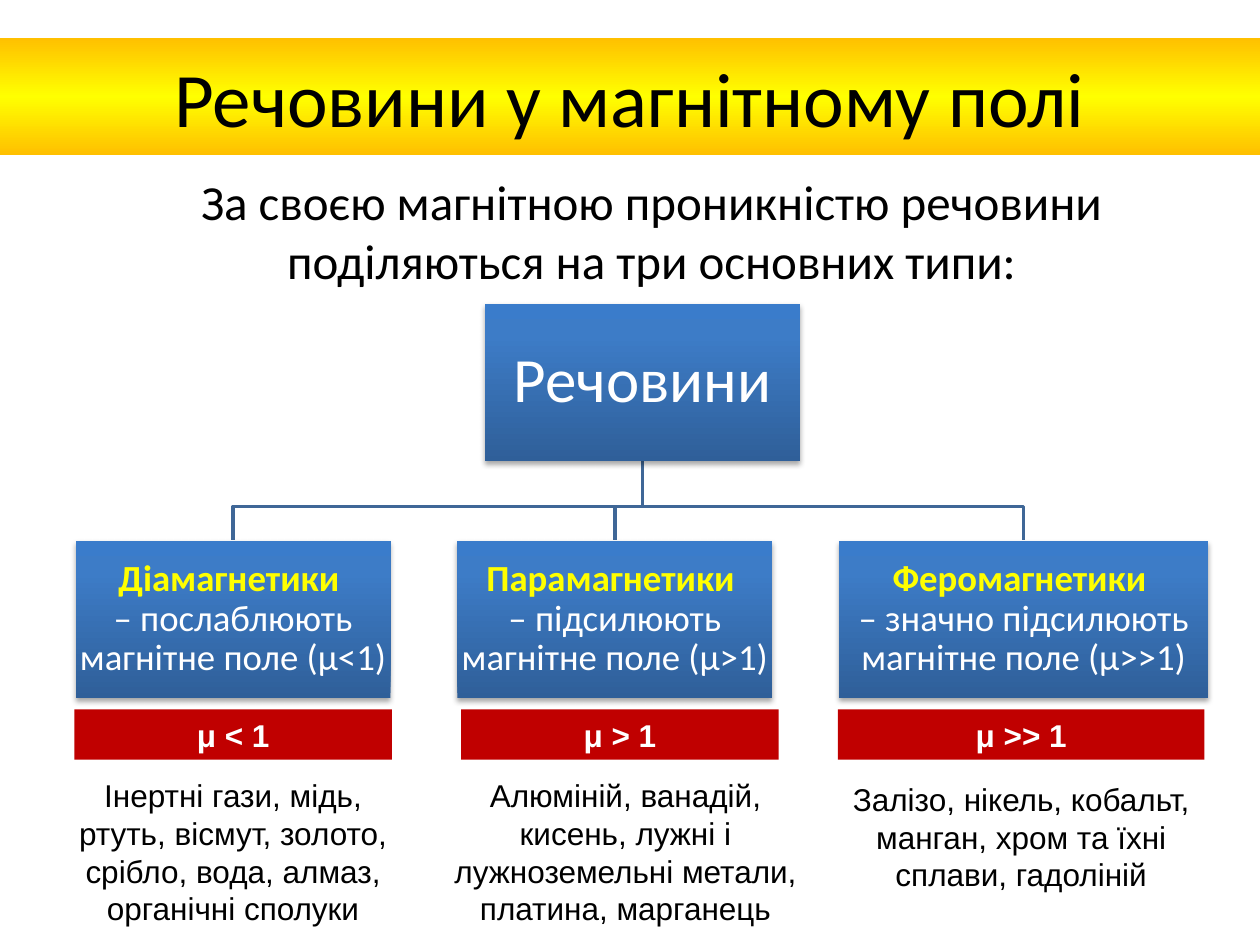
from dataclasses import dataclass

from lxml.etree import SubElement
from pptx import Presentation
from pptx.dml.color import RGBColor
from pptx.enum.shapes import MSO_SHAPE
from pptx.enum.text import MSO_ANCHOR, PP_ALIGN
from pptx.oxml.ns import qn
from pptx.util import Inches, Pt


@dataclass(frozen=True)
class Theme:
    """Colours, fonts and type sizes of the slide."""
    heading_font: str = "Calibri"
    note_font: str = "Arial"
    title_size: int = 44
    root_size: int = 36
    lead_size: int = 28
    type_size: int = 21
    note_size: int = 18
    dark: str = "000000"
    light: str = "FFFFFF"
    accent: str = "FFFF00"
    tag: str = "C00000"
    branch: str = "3F6797"
    banner: tuple = ((0, "FFC000"), (50, "FFFF00"), (100, "FFC000"))
    box: tuple = ((0, "2F5F99"), (80, "3D7CC7"), (100, "3A7CCB"))


@dataclass(frozen=True)
class Substance:
    """One column: its texts and the left and width of its tag and note."""
    name: str
    effect: str
    permeability: str
    examples: tuple
    width: float
    tag_span: tuple
    note_span: tuple
    note_top: float = 6.11


THEME = Theme()
WIDTH, HEIGHT = 10, 7.5
MARGIN, GAP = 0.6, 0.53
BOX_HEIGHT = 1.25
ROOT = (3.85, 2.41, 2.5, BOX_HEIGHT)
BRANCH_TOP, BRANCH_BEND, TYPE_TOP = 3.66, 4.02, 4.29
TAG_TOP, TAG_HEIGHT = 5.63, 0.4
LINE_HEIGHT = 0.3

SUBSTANCES = (
    Substance("Діамагнетики ", "– послаблюють магнітне поле (μ<1)", "μ < 1",
              ("Інертні гази, мідь, ртуть, вісмут, золото, срібло, вода, алмаз,",
               "органічні сполуки"),
              2.5, (0.59, 2.52), (0.51, 2.68)),
    Substance("Парамагнетики ", "– підсилюють магнітне поле (μ>1)", "μ > 1",
              ("Алюміній, ванадій, кисень, лужні і лужноземельні метали, "
               "платина, марганець",),
              2.5, (3.66, 2.52), (3.43, 3.07)),
    Substance("Феромагнетики ", "– значно підсилюють магнітне поле (μ>>1)", "μ >> 1",
              ("Залізо, нікель, кобальт, манган, хром та їхні сплави, гадоліній",),
              2.93, (6.65, 2.91), (6.65, 2.91), 6.14),
)


def place(shape, left, top, width, height):
    """Move and size a shape in inches."""
    shape.left, shape.top = Inches(left), Inches(top)
    shape.width, shape.height = Inches(width), Inches(height)


def style(paragraph, font_name, size, color=None, bold=False):
    """Centre a paragraph and set its font."""
    paragraph.alignment = PP_ALIGN.CENTER
    font = paragraph.font
    font.name, font.size, font.bold = font_name, Pt(size), bold
    if color:
        font.color.rgb = RGBColor.from_string(color)


def fill_gradient(shape, stops, angle):
    """Fill a shape with a linear gradient of any number of stops."""
    shape.fill.gradient()
    gradient = shape.fill._fill._gradFill
    stop_list = gradient.find(qn("a:gsLst"))
    for stop in list(stop_list):
        stop_list.remove(stop)
    for position, color in stops:
        stop = SubElement(stop_list, qn("a:gs"), pos=str(position * 1000))
        SubElement(stop, qn("a:srgbClr"), val=color)
    gradient.find(qn("a:lin")).set("ang", str(angle * 60000))


def cast_shadow(shape):
    """Give a shape a soft shadow straight below it."""
    shape.shadow.inherit = False
    effects = shape._element.spPr.find(qn("a:effectLst"))
    shadow = SubElement(effects, qn("a:outerShdw"), blurRad=str(Pt(3.1)),
                        dist=str(Pt(1.8)), dir=str(90 * 60000), rotWithShape="0")
    color = SubElement(shadow, qn("a:srgbClr"), val=THEME.dark)
    SubElement(color, qn("a:alpha"), val="35000")


def add_rectangle(slide, bounds):
    """Add a rectangle without line or shadow."""
    shape = slide.shapes.add_shape(MSO_SHAPE.RECTANGLE, *map(Inches, bounds))
    shape.shadow.inherit = False
    shape.line.fill.background()
    return shape


def add_box(slide, bounds, inset, size, color=None):
    """Add a blue diagram box and return its paragraph."""
    shape = add_rectangle(slide, bounds)
    fill_gradient(shape, THEME.box, 270)
    cast_shadow(shape)
    frame = shape.text_frame
    frame.margin_left = frame.margin_right = Inches(inset)
    frame.margin_top = frame.margin_bottom = Inches(inset)
    frame.vertical_anchor = MSO_ANCHOR.MIDDLE
    paragraph = frame.paragraphs[0]
    style(paragraph, THEME.heading_font, size, color)
    paragraph.line_spacing = 0.9
    return paragraph


def add_type_box(slide, substance, left):
    """Add the box that names a type and its effect on the field."""
    bounds = (left, TYPE_TOP, substance.width, BOX_HEIGHT)
    paragraph = add_box(slide, bounds, 0.01, THEME.type_size)
    name = paragraph.add_run()
    name.text = substance.name
    name.font.bold = True
    name.font.color.rgb = RGBColor.from_string(THEME.accent)
    paragraph.add_line_break()
    effect = paragraph.add_run()
    effect.text = substance.effect
    effect.font.color.rgb = RGBColor.from_string(THEME.light)


def add_branch(slide, start, end):
    """Add the bent line from the root box down to a type box."""
    builder = slide.shapes.build_freeform(Inches(start), Inches(BRANCH_TOP))
    corners = ((start, BRANCH_BEND), (end, BRANCH_BEND), (end, TYPE_TOP))
    builder.add_line_segments([(Inches(x), Inches(y)) for x, y in corners], close=False)
    branch = builder.convert_to_shape()
    branch.shadow.inherit = False
    branch.fill.background()
    branch.line.color.rgb = RGBColor.from_string(THEME.branch)
    branch.line.width = Pt(2)


def add_tag(slide, substance):
    """Add the red bar with the permeability of a type."""
    left, width = substance.tag_span
    tag = add_rectangle(slide, (left, TAG_TOP, width, TAG_HEIGHT))
    tag.fill.solid()
    tag.fill.fore_color.rgb = RGBColor.from_string(THEME.tag)
    tag.text_frame.text = substance.permeability
    style(tag.text_frame.paragraphs[0], THEME.note_font, THEME.note_size, THEME.light, True)


def add_note(slide, substance):
    """Add the list of example substances."""
    left, width = substance.note_span
    height = LINE_HEIGHT * 4 + 0.1
    note = slide.shapes.add_textbox(*map(Inches, (left, substance.note_top, width, height)))
    frame = note.text_frame
    frame.word_wrap = True
    frame.text = "\n".join(substance.examples)
    for paragraph in frame.paragraphs:
        style(paragraph, THEME.note_font, THEME.note_size, THEME.dark)


def fill_heading(slide):
    """Fill the title banner and the lead sentence."""
    title, lead = slide.placeholders
    place(title, 0, HEIGHT * 0.04, WIDTH, 0.93)
    fill_gradient(title, THEME.banner, 90)
    title.text_frame.text = "Речовини у магнітному полі"
    style(title.text_frame.paragraphs[0], THEME.heading_font, THEME.title_size, THEME.dark)

    place(lead, 0.58, 1.31, 9.18, 1.1)
    lead.text_frame.text = ("За своєю магнітною проникністю речовини "
                            "поділяються на три основних типи:")
    paragraph = lead.text_frame.paragraphs[0]
    properties = paragraph._p.get_or_add_pPr()
    properties.set("marL", "0")
    properties.set("indent", "0")
    SubElement(properties, qn("a:buNone"))
    paragraph.space_before = Pt(0)
    style(paragraph, THEME.heading_font, THEME.lead_size, THEME.dark)


def main():
    """Build the slide and save it."""
    presentation = Presentation()
    presentation.slide_width, presentation.slide_height = Inches(WIDTH), Inches(HEIGHT)
    slide = presentation.slides.add_slide(presentation.slide_layouts[1])
    fill_heading(slide)

    lefts = [MARGIN + sum(previous.width + GAP for previous in SUBSTANCES[:index])
             for index in range(len(SUBSTANCES))]
    for substance, left in zip(SUBSTANCES, lefts):
        add_branch(slide, ROOT[0] + ROOT[2] / 2, left + substance.width / 2)
    add_box(slide, ROOT, 0.03, THEME.root_size, THEME.light).add_run().text = "Речовини"
    for substance, left in zip(SUBSTANCES, lefts):
        add_type_box(slide, substance, left)
        add_tag(slide, substance)
        add_note(slide, substance)
    presentation.save("out.pptx")


if __name__ == "__main__":
    main()
